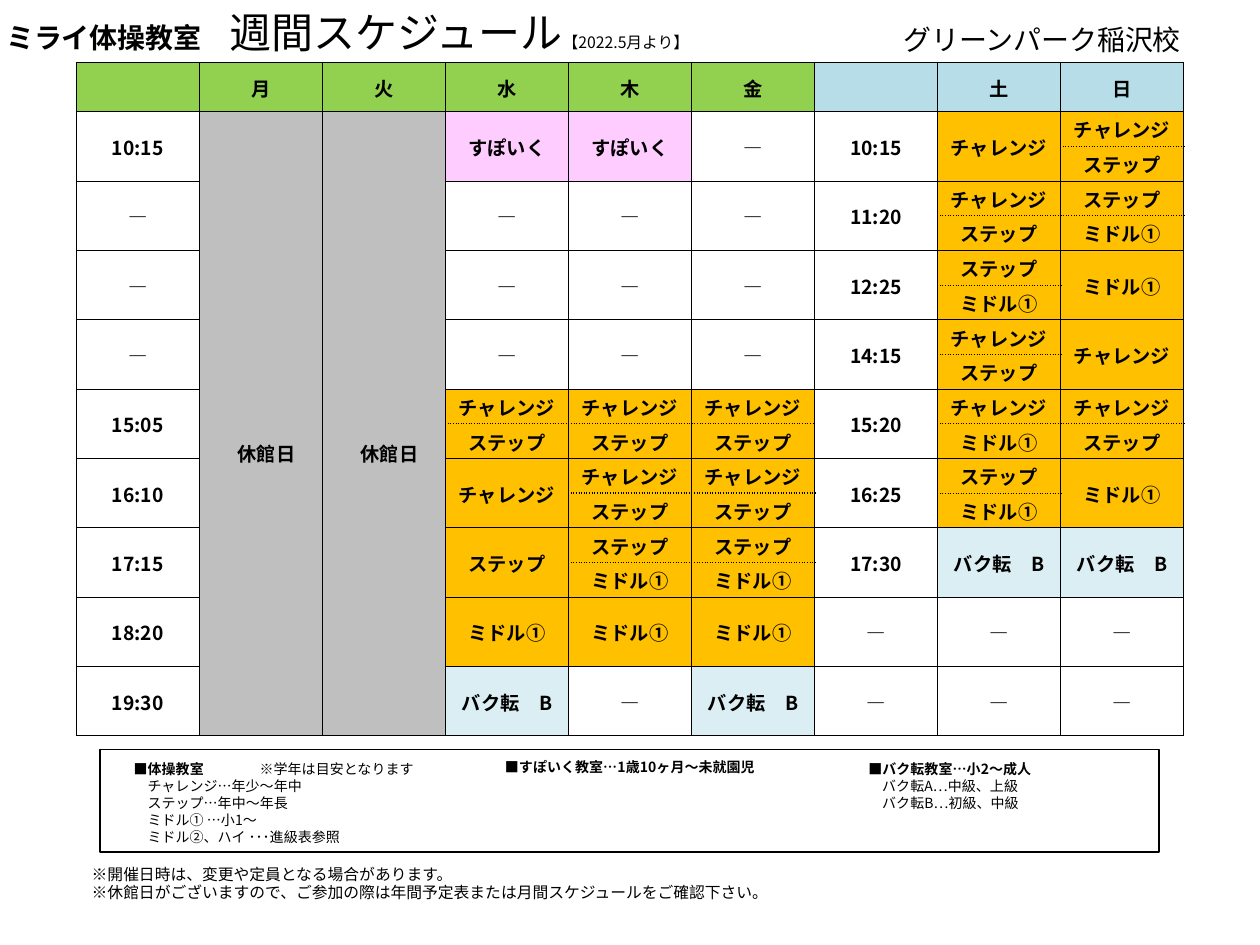
from dataclasses import dataclass

import lxml.etree
import pptx
import pptx.dml.color
import pptx.enum.shapes
import pptx.enum.text
import pptx.oxml.ns
import pptx.util

Cm = pptx.util.Cm
Pt = pptx.util.Pt
RGBColor = pptx.dml.color.RGBColor
ALIGN = pptx.enum.text.PP_ALIGN
ANCHOR = pptx.enum.text.MSO_ANCHOR
qn = pptx.oxml.ns.qn

FONT = "Noto Sans CJK JP"
BLACK = RGBColor(0x00, 0x00, 0x00)
WHITE = RGBColor(0xFF, 0xFF, 0xFF)
GREEN = RGBColor(0x92, 0xD0, 0x50)
BLUE = RGBColor(0xB6, 0xDD, 0xE8)
PALE_BLUE = RGBColor(0xDB, 0xEE, 0xF4)
GREY = RGBColor(0xBF, 0xBF, 0xBF)
PINK = RGBColor(0xFF, 0xCC, 0xFF)
ORANGE = RGBColor(0xFF, 0xC0, 0x00)

CLASS_FILLS = {
    "チャレンジ": ORANGE, "ステップ": ORANGE, "ミドル①": ORANGE,
    "すぽいく": PINK, "バク転　B": PALE_BLUE, "休館日": GREY,
}
CLOSED = "休館日"
TABLE_SIZE = 11
SPLIT_BLOCKS = 7  # time blocks made of two half rows; later ones are one row
HALF_ROW = Cm(0.7)
FULL_ROW = Cm(1.4)


@dataclass
class Column:
    header: str
    fill: RGBColor
    slots: tuple  # one entry per time block, "/" parts two classes
    dot_width: float = 0.5


@dataclass
class Span:
    text: str
    size: float
    bold: bool = False


@dataclass
class Line:
    spans: tuple
    indent: float = 0  # cm


COLUMNS = (
    Column("", GREEN, ("10:15", "―", "―", "―", "15:05", "16:10", "17:15", "18:20", "19:30")),
    Column("月", GREEN, (CLOSED,)),
    Column("火", GREEN, (CLOSED,)),
    Column("水", GREEN, ("すぽいく", "―", "―", "―", "チャレンジ/ステップ", "チャレンジ",
                        "ステップ", "ミドル①", "バク転　B"), 1),
    Column("木", GREEN, ("すぽいく", "―", "―", "―", "チャレンジ/ステップ", "チャレンジ/ステップ",
                        "ステップ/ミドル①", "ミドル①", "―"), 1),
    Column("金", GREEN, ("―", "―", "―", "―", "チャレンジ/ステップ", "チャレンジ/ステップ",
                        "ステップ/ミドル①", "ミドル①", "バク転　B"), 1),
    Column("", BLUE, ("10:15", "11:20", "12:25", "14:15", "15:20", "16:25", "17:30", "―", "―")),
    Column("土", BLUE, ("チャレンジ", "チャレンジ/ステップ", "ステップ/ミドル①",
                       "チャレンジ/ステップ", "チャレンジ/ミドル①", "ステップ/ミドル①",
                       "バク転　B", "―", "―")),
    Column("日", BLUE, ("チャレンジ/ステップ", "ステップ/ミドル①", "ミドル①", "チャレンジ",
                       "チャレンジ/ステップ", "ミドル①", "バク転　B", "―", "―")),
)

HEADING = (Line((Span("ミライ体操教室　", 16, True), Span("週間スケジュール", 24),
                 Span("【2022.5月より】", 9))),)
BRANCH = (Line((Span("グリーンパーク稲沢校", 16),)),)
NOTES = tuple(Line((Span(text, 9),)) for text in (
    "※開催日時は、変更や定員となる場合があります。",
    "※休館日がございますので、ご参加の際は年間予定表または月間スケジュールをご確認下さい。",
))
TODDLERS = (Line((Span("■すぽいく教室…1歳10ヶ月～未就園児", 8, True),)),)
GYMNASTICS = (
    Line((Span("■体操教室\t", 8, True), Span("※学年は目安となります", 8))),
    *(Line((Span(text, 8),), 0.28) for text in (
        "チャレンジ…年少～年中", "ステップ…年中～年長", "ミドル① …小1～",
        "ミドル②、ハイ ･･･進級表参照")),
)
BACKFLIP = (
    Line((Span("■バク転教室…小2～成人", 8, True),)),
    *(Line((Span(text, 8),), 0.28) for text in ("バク転A…中級、上級", "バク転B…初級、中級")),
)


def apply(target: object, settings: dict) -> None:
    for name, value in settings.items():
        setattr(target, name, value)


def add_span(para: object, span: Span) -> None:
    run = para.add_run()
    run.text = span.text
    apply(run.font, {"name": FONT, "size": Pt(span.size), "bold": span.bold})
    run.font.color.rgb = BLACK
    lxml.etree.SubElement(run.font._element, qn("a:ea"), typeface=FONT)


def write_lines(box: object, place: tuple, lines: tuple, wrap: bool = True) -> None:
    """Move a box to place (left, top, width, height in cm) and fill it."""
    apply(box, dict(zip(("left", "top", "width", "height"), map(Cm, place))))
    frame = box.text_frame
    apply(frame, {"word_wrap": wrap, "vertical_anchor": ANCHOR.TOP,
                  "auto_size": pptx.enum.text.MSO_AUTO_SIZE.NONE})
    for index, line in enumerate(lines):
        para = frame.add_paragraph() if index else frame.paragraphs[0]
        tallest = max(span.size for span in line.spans)
        apply(para, {"alignment": ALIGN.LEFT, "space_before": Pt(0),
                     "line_spacing": Pt(1.2 * tallest)})
        props = para._p.get_or_add_pPr()
        props.set("marL", str(Cm(line.indent)))
        props.set("indent", "0")
        lxml.etree.SubElement(props, qn("a:buNone"))
        if any("\t" in span.text for span in line.spans):
            stops = lxml.etree.SubElement(props, qn("a:tabLst"))
            lxml.etree.SubElement(stops, qn("a:tab"), pos=str(Cm(2)), algn="l")
        for span in line.spans:
            add_span(para, span)


def set_borders(cell: object, dotted: str, dot_width: float) -> None:
    """Draw four thin borders; the side named by dotted (T or B) is dotted."""
    props = cell._tc.get_or_add_tcPr()
    for index, side in enumerate("LRTB"):
        width = dot_width if side == dotted else 0.5
        border = lxml.etree.Element(qn(f"a:ln{side}"), w=str(Pt(width)))
        fill = lxml.etree.SubElement(border, qn("a:solidFill"))
        lxml.etree.SubElement(fill, qn("a:srgbClr"), val=str(BLACK))
        dash = "sysDot" if side == dotted else "solid"
        lxml.etree.SubElement(border, qn("a:prstDash"), val=dash)
        props.insert(index, border)


def fill_cell(cell: object, text: str, fill: RGBColor,
              dotted: str = "", dot_width: float = 0.5) -> None:
    cell.vertical_anchor = ANCHOR.MIDDLE
    cell.fill.solid()
    cell.fill.fore_color.rgb = fill
    set_borders(cell, dotted, dot_width)
    para = cell.text_frame.paragraphs[0]
    para.alignment = ALIGN.CENTER
    if text:
        add_span(para, Span(text, TABLE_SIZE, True))


def fill_column(table: object, number: int, column: Column) -> None:
    fill_cell(table.cell(0, number), column.header, column.fill)
    if column.slots == (CLOSED,):
        top = table.cell(1, number)
        top.merge(table.cell(len(table.rows) - 1, number))
        fill_cell(top, CLOSED, CLASS_FILLS[CLOSED])
        apply(top, {"margin_top": Cm(1.17), "margin_left": Cm(0.25)})
        return
    for block, slot in enumerate(column.slots):
        row = 1 + block + min(block, SPLIT_BLOCKS)
        parts = slot.split("/")
        if len(parts) == 1 and block < SPLIT_BLOCKS:
            table.cell(row, number).merge(table.cell(row + 1, number))
        for offset, name in enumerate(parts):
            dotted = "BT"[offset] if len(parts) == 2 else ""
            fill_cell(table.cell(row + offset, number), name,
                      CLASS_FILLS.get(name, WHITE), dotted, column.dot_width)


def add_schedule(page: object) -> None:
    heights = [Cm(0.99)] + [HALF_ROW] * (2 * SPLIT_BLOCKS) + [FULL_ROW] * 2
    width = Cm(2.48)
    table = page.shapes.add_table(len(heights), len(COLUMNS), Cm(1.54), Cm(1.26),
                                  width * len(COLUMNS), sum(heights)).table
    apply(table, {"first_row": False, "horz_banding": False})
    for row, height in zip(table.rows, heights):
        row.height = height
    for cell in table.iter_cells():
        apply(cell, {"margin_left": Cm(0.02), "margin_right": Cm(0.02),
                     "margin_top": Cm(0.02), "margin_bottom": 0})
    for number, column in enumerate(COLUMNS):
        table.columns[number].width = width
        fill_column(table, number, column)
    for cell in table.iter_cells():
        if not cell.text:
            lxml.etree.SubElement(cell.text_frame.paragraphs[0]._p, qn("a:endParaRPr"),
                                  sz=str(TABLE_SIZE * 100))


def add_legend_frame(page: object) -> None:
    frame = page.shapes.add_shape(pptx.enum.shapes.MSO_SHAPE.RECTANGLE,
                                  Cm(2.01), Cm(15.11), Cm(21.36), Cm(2.06))
    frame.shadow.inherit = False
    frame.fill.background()
    frame.line.color.rgb = BLACK
    frame.line.width = Pt(1)


def main() -> None:
    deck = pptx.Presentation()
    deck.slide_width, deck.slide_height = Cm(25.4), Cm(19.05)
    page = deck.slides.add_slide(deck.slide_layouts.get_by_name("Two Content"))
    title, left_body, right_body = list(page.placeholders)[:3]

    def new_box() -> object:
        return page.shapes.add_textbox(0, 0, 0, 0)

    write_lines(title, (-0.13, 0, 16.61, 1.27), HEADING)
    write_lines(new_box(), (17.96, 0.33, 6.22, 0.94), BRANCH, wrap=False)
    add_schedule(page)
    add_legend_frame(page)
    write_lines(left_body, (2.44, 15.21, 7.26, 1.96), GYMNASTICS)
    write_lines(new_box(), (9.93, 15.16, 5.56, 1.37), TODDLERS)
    write_lines(right_body, (17.25, 15.21, 7.26, 1.27), BACKFLIP)
    write_lines(new_box(), (1.6, 17.3, 17.45, 1.02), NOTES)
    deck.save("out.pptx")


if __name__ == "__main__":
    main()
